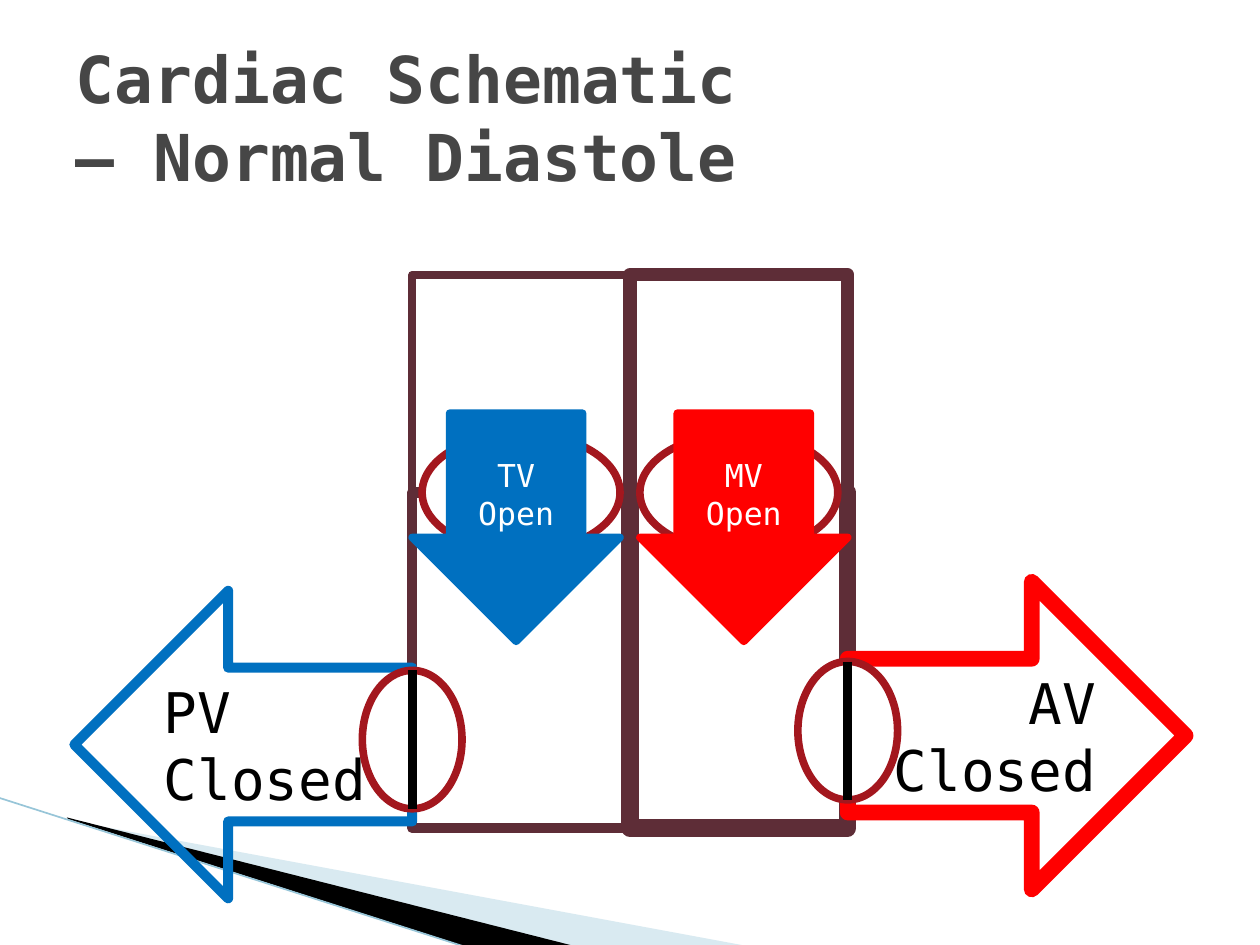
import pptx
import pptx.dml.color
import pptx.enum.shapes
import pptx.enum.text
import pptx.util
from lxml import etree
from pptx.util import Cm

SHAPES = pptx.enum.shapes.MSO_SHAPE
ALIGN = pptx.enum.text.PP_ALIGN
MIDDLE = pptx.enum.text.MSO_ANCHOR.MIDDLE
DRAWING = "{http://schemas.openxmlformats.org/drawingml/2006/main}"

WALL, VALVE, RED, BLUE = "5E2D37", "A3171E", "FF0000", "0070C0"
BLACK, WHITE = "000000", "FFFFFF"

CHAMBER_WIDTH = 4.39
SEPTUM = 12.7
LEFT_WALL, RIGHT_WALL = SEPTUM - CHAMBER_WIDTH, SEPTUM + CHAMBER_WIDTH
ATRIUM_TOP, VALVE_PLANE, VENTRICLE_HEIGHT = 5.54, 9.93, 6.76
VESSEL_WIDTH, VESSEL_HEIGHT = 6.81, 6.2
FLOW_WIDTH, FLOW_HEIGHT, FLOW_TOP = 4.19, 4.6, 8.33
INLET_WIDTH, INLET_HEIGHT = 3.99, 2.39
OUTLET_WIDTH, OUTLET_HEIGHT = 2.01, 2.79


def rgb(value):
    return pptx.dml.color.RGBColor.from_string(value)


def paint(shape, fill=None, line=None, weight=0):
    shape.shadow.inherit = False
    if fill:
        shape.fill.solid()
        shape.fill.fore_color.rgb = rgb(fill)
    else:
        shape.fill.background()
    if line:
        shape.line.color.rgb = rgb(line)
        shape.line.width = pptx.util.Pt(weight)
    else:
        shape.line.fill.background()


def set_text(shape, text, size, color, alignment, bold=False):
    frame = shape.text_frame
    frame.text = text
    frame_format = {"word_wrap": True, "vertical_anchor": MIDDLE,
                    "auto_size": pptx.enum.text.MSO_AUTO_SIZE.NONE}
    for name, value in frame_format.items():
        setattr(frame, name, value)
    font_format = {"name": "DejaVu Sans Mono", "size": pptx.util.Pt(size), "bold": bold}
    for para in frame.paragraphs:
        para.alignment = alignment
        for span in para.runs:
            for name, value in font_format.items():
                setattr(span.font, name, value)
            span.font.color.rgb = rgb(color)


def add_shape(page, kind, left, top, width, height, **style):
    shape = page.shapes.add_shape(kind, Cm(left), Cm(top), Cm(width), Cm(height))
    paint(shape, **style)
    return shape


def add_valve(page, center_x, center_y, width, height):
    add_shape(page, SHAPES.OVAL, center_x - width / 2, center_y - height / 2,
              width, height, fill=WHITE, line=VALVE, weight=4.33)


def add_line(page, start, end, color, weight):
    line = page.shapes.add_connector(
        pptx.enum.shapes.MSO_CONNECTOR.STRAIGHT, *map(Cm, start + end))
    line.line.color.rgb = rgb(color)
    line.line.width = pptx.util.Pt(weight)
    etree.SubElement(line.element.spPr, DRAWING + "effectLst")


def add_wedge(page, points, color, opacity=100):
    corners = [(Cm(x), Cm(y)) for x, y in points]
    builder = page.shapes.build_freeform(*corners[0])
    builder.add_line_segments(corners[1:], close=True)
    wedge = builder.convert_to_shape()
    paint(wedge, fill=color)
    if opacity < 100:
        fill_color = wedge.element.spPr.find(f"{DRAWING}solidFill/{DRAWING}srgbClr")
        etree.SubElement(fill_color, DRAWING + "alpha", val=str(opacity * 1000))


def add_decoration(page):
    add_wedge(page, [(1.4, 16.54), (15.11, 19.08), (11.58, 19.08), (1.4, 16.51)], "A0CBDC", 40)
    add_wedge(page, [(1.35, 16.48), (11.61, 19.08), (9.45, 19.1), (1.37, 16.51)], BLACK)
    add_line(page, (-0.03, 16.08), (9.42, 19.1), "97C5D8", 0.95)


def add_title(page):
    title = page.shapes.title
    place = {"left": 1.27, "top": 0.76, "width": 22.86, "height": 3.18}
    for name, value in place.items():
        setattr(title, name, Cm(value))
    set_text(title, "Cardiac Schematic\v– Normal Diastole", 36.9, "464646", ALIGN.LEFT, True)


def add_chambers(page):
    rows = [(ATRIUM_TOP, CHAMBER_WIDTH, (4.33, 7.5)),
            (VALVE_PLANE, VENTRICLE_HEIGHT, (6, 10))]
    for top, height, weights in rows:
        for left, weight in zip((LEFT_WALL, SEPTUM), weights):
            add_shape(page, SHAPES.RECTANGLE, left, top, CHAMBER_WIDTH, height,
                      line=WALL, weight=weight)


def add_vessels(page):
    vessels = [
        ("AV Closed", SHAPES.RIGHT_ARROW, RIGHT_WALL, 11.73, RED, 9, ALIGN.RIGHT),
        ("PV Closed", SHAPES.LEFT_ARROW, LEFT_WALL - VESSEL_WIDTH, 11.91, BLUE, 5.75, ALIGN.LEFT),
    ]
    for text, kind, left, top, color, weight, alignment in vessels:
        vessel = add_shape(page, kind, left, top, VESSEL_WIDTH, VESSEL_HEIGHT,
                           line=color, weight=weight)
        set_text(vessel, text, 32, BLACK, alignment)


def add_valves(page):
    for left in (LEFT_WALL, SEPTUM):
        add_valve(page, left + CHAMBER_WIDTH / 2, VALVE_PLANE, INLET_WIDTH, INLET_HEIGHT)
    outlets = [(RIGHT_WALL, 14.73), (LEFT_WALL, 14.91)]
    for wall, center in outlets:
        add_valve(page, wall, center, OUTLET_WIDTH, OUTLET_HEIGHT)
    for wall, center in outlets:
        add_line(page, (wall, center - OUTLET_HEIGHT / 2),
                 (wall, center + OUTLET_HEIGHT / 2), BLACK, 5)


def add_flows(page):
    flows = [("TV Open", LEFT_WALL, BLUE), ("MV Open", RIGHT_WALL - FLOW_WIDTH, RED)]
    for text, left, color in flows:
        flow = add_shape(page, SHAPES.DOWN_ARROW, left, FLOW_TOP, FLOW_WIDTH, FLOW_HEIGHT,
                         fill=color, line=color, weight=4.33)
        flow.adjustments[0] = 0.64
        set_text(flow, text, 18, WHITE, ALIGN.CENTER)


def main():
    deck = pptx.Presentation()
    deck.slide_width, deck.slide_height = Cm(25.4), Cm(19.05)
    page = deck.slides.add_slide(deck.slide_layouts[5])
    add_decoration(page)
    add_title(page)
    add_chambers(page)
    add_vessels(page)
    add_valves(page)
    add_flows(page)
    deck.save("out.pptx")


if __name__ == "__main__":
    main()
